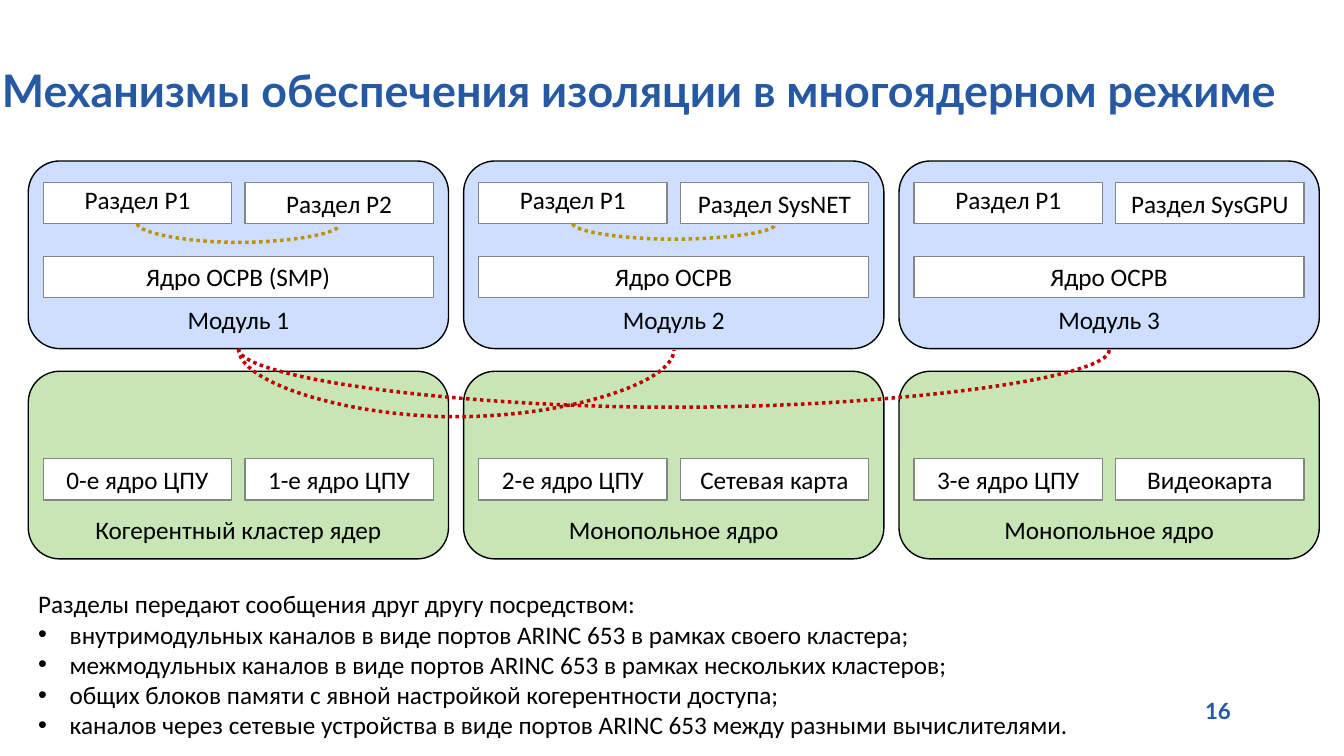
"""Build a slide on isolation mechanisms in multi-core mode."""
import pptx
import pptx.dml.color
import pptx.enum.dml
import pptx.enum.shapes
import pptx.enum.text
import pptx.oxml.ns
import pptx.util
from lxml import etree

Pt = pptx.util.Pt
RGBColor = pptx.dml.color.RGBColor
ALIGN = pptx.enum.text.PP_ALIGN
ANCHOR = pptx.enum.text.MSO_ANCHOR
SHAPE = pptx.enum.shapes.MSO_SHAPE
qn = pptx.oxml.ns.qn

TITLE = "Механизмы обеспечения изоляции в многоядерном режиме"
SLIDE_NUMBER = "16"
COLUMNS = [
    {"module": "Модуль 1", "partitions": ("Раздел P1", "Раздел P2"),
     "kernel": "Ядро ОСРВ (SMP)", "hardware": ("0-е ядро ЦПУ", "1-е ядро ЦПУ"),
     "cluster": "Когерентный кластер ядер"},
    {"module": "Модуль 2", "partitions": ("Раздел P1", "Раздел SysNET"),
     "kernel": "Ядро ОСРВ", "hardware": ("2-е ядро ЦПУ", "Сетевая карта"),
     "cluster": "Монопольное ядро"},
    {"module": "Модуль 3", "partitions": ("Раздел P1", "Раздел SysGPU"),
     "kernel": "Ядро ОСРВ", "hardware": ("3-е ядро ЦПУ", "Видеокарта"),
     "cluster": "Монопольное ядро"},
]
INTRO = "Разделы передают сообщения друг другу посредством:"
CHANNEL_KINDS = [
    "внутримодульных каналов в виде портов ARINC 653 в рамках своего кластера;",
    "межмодульных каналов в виде портов ARINC 653 в рамках нескольких кластеров;",
    "общих блоков памяти с явной настройкой когерентности доступа;",
    "каналов через сетевые устройства в виде портов ARINC 653 между разными вычислителями.",
]
INNER_CHANNELS = [(0, 13.45), (1, 11.18)]
OUTER_CHANNELS = [(0, 1, 49.04), (0, 2, 42.25)]

BLACK = RGBColor(0x00, 0x00, 0x00)
WHITE = RGBColor(0xFF, 0xFF, 0xFF)
GRAY = RGBColor(0x84, 0x84, 0x84)
BLUE = RGBColor(0x26, 0x59, 0xA4)
MODULE_FILL = RGBColor(0xCD, 0xDE, 0xFF)
CLUSTER_FILL = RGBColor(0xC7, 0xE5, 0xB5)
RED = RGBColor(0xC0, 0x00, 0x00)
GOLD = RGBColor(0xBF, 0x90, 0x00)

COLUMN_LEFT, COLUMN_PITCH = 20.2, 311
BLOCK_WIDTH, BLOCK_HEIGHT = 300.2, 134
MODULE_TOP, CLUSTER_TOP = 115, 265.2
CELL_INSET, CELL_PITCH = 10.7, 144
CELL_WIDTH, CELL_HEIGHT = 134.6, 29.5
PARTITION_TOP, KERNEL_TOP, HARDWARE_TOP = 130.3, 183, 327.6
INSET = 3.6
FIRST_PARTITION_LIFT = 5.7


def add_run(paragraph, text, size=18, font="Calibri", color=BLACK, bold=False):
    run = paragraph.add_run()
    run.text = text
    run.font.size = Pt(size)
    run.font.name = font
    run.font.bold = bold
    run.font.color.rgb = color


def set_insets(frame, bottom=INSET):
    frame.margin_left = frame.margin_right = frame.margin_top = Pt(INSET)
    frame.margin_bottom = Pt(bottom)


def add_block(slide, kind, left, top, width, height, fill, line, text, anchor):
    shape = slide.shapes.add_shape(kind, Pt(left), Pt(top), Pt(width), Pt(height))
    shape.shadow.inherit = False
    shape.fill.solid()
    shape.fill.fore_color.rgb = fill
    shape.line.color.rgb = line
    shape.line.width = Pt(1)
    frame = shape.text_frame
    frame.word_wrap = True
    frame.vertical_anchor = anchor
    set_insets(frame)
    frame.paragraphs[0].alignment = ALIGN.CENTER
    add_run(frame.paragraphs[0], text)
    return shape


def add_cell(slide, left, top, width, text):
    return add_block(slide, SHAPE.RECTANGLE, left, top, width, CELL_HEIGHT,
                     WHITE, GRAY, text, ANCHOR.MIDDLE)


def add_column(slide, left, column):
    for top, fill, key in ((MODULE_TOP, MODULE_FILL, "module"),
                           (CLUSTER_TOP, CLUSTER_FILL, "cluster")):
        add_block(slide, SHAPE.ROUNDED_RECTANGLE, left, top, BLOCK_WIDTH, BLOCK_HEIGHT,
                  fill, BLACK, column[key], ANCHOR.BOTTOM)
    cell_left = left + CELL_INSET
    for top, key in ((PARTITION_TOP, "partitions"), (HARDWARE_TOP, "hardware")):
        for index, text in enumerate(column[key]):
            cell = add_cell(slide, cell_left + index * CELL_PITCH, top, CELL_WIDTH, text)
            if key == "partitions" and index == 0:
                set_insets(cell.text_frame, INSET + FIRST_PARTITION_LIFT)
    add_cell(slide, cell_left, KERNEL_TOP, CELL_PITCH + CELL_WIDTH, column["kernel"])


def add_channel(slide, start, end, top, depth, color):
    """Draw a hanging curve: a one-point-wide connector turned by 270 degrees."""
    center, half_span = (start + end) / 2, (end - start) / 2
    middle = top + 0.5
    connector = slide.shapes.add_connector(
        pptx.enum.shapes.MSO_CONNECTOR.CURVE,
        Pt(center + 0.5), Pt(middle - half_span), Pt(center - 0.5), Pt(middle + half_span))
    connector.line.color.rgb = color
    connector.line.width = Pt(2.5)
    connector.line.dash_style = pptx.enum.dml.MSO_LINE.ROUND_DOT
    properties = connector.element.spPr
    properties.find(qn("a:xfrm")).set("rot", str(270 * 60000))
    geometry = properties.find(qn("a:prstGeom"))
    adjustments = geometry.find(qn("a:avLst"))
    if adjustments is None:
        adjustments = etree.SubElement(geometry, qn("a:avLst"))
    etree.SubElement(adjustments, qn("a:gd"), name="adj1", fmla=f"val {round(depth * 100000)}")
    etree.SubElement(properties, qn("a:effectLst"))


def add_text_box(slide, left, top, width, height):
    frame = slide.shapes.add_textbox(Pt(left), Pt(top), Pt(width), Pt(height)).text_frame
    frame.word_wrap = True
    return frame


def add_title(slide):
    title = slide.shapes.title
    title.left, title.top, title.width, title.height = Pt(-2.2), Pt(14.4), Pt(1039.7), Pt(104.4)
    frame = title.text_frame
    frame.auto_size = pptx.enum.text.MSO_AUTO_SIZE.NONE
    frame.vertical_anchor = ANCHOR.MIDDLE
    set_insets(frame)
    paragraph = frame.paragraphs[0]
    paragraph.alignment = ALIGN.LEFT
    paragraph.line_spacing = 0.9
    add_run(paragraph, TITLE, 32, "Lato", BLUE, True)


def add_channel_list(slide):
    frame = add_text_box(slide, 20.2, 416.9, 880.6, 138.2)
    add_run(frame.paragraphs[0], INTRO)
    for text in CHANNEL_KINDS:
        paragraph = frame.add_paragraph()
        add_run(paragraph, text)
        properties = paragraph._p.get_or_add_pPr()
        properties.set("marL", str(Pt(22.5)))
        properties.set("indent", str(-Pt(22.5)))
        etree.SubElement(properties, qn("a:buFont"), typeface="Arial")
        etree.SubElement(properties, qn("a:buChar"), char="•")


def main():
    presentation = pptx.Presentation()
    presentation.slide_width, presentation.slide_height = Pt(960), Pt(540)
    slide = presentation.slides.add_slide(presentation.slide_layouts[5])
    add_title(slide)

    lefts = [COLUMN_LEFT + index * COLUMN_PITCH for index in range(len(COLUMNS))]
    for left, column in zip(lefts, COLUMNS):
        add_column(slide, left, column)
    for index, depth in INNER_CHANNELS:
        start = lefts[index] + CELL_INSET + CELL_WIDTH / 2
        add_channel(slide, start, start + CELL_PITCH, PARTITION_TOP + CELL_HEIGHT, depth, GOLD)
    for first, last, depth in OUTER_CHANNELS:
        start, end = (lefts[index] + BLOCK_WIDTH / 2 for index in (first, last))
        add_channel(slide, start, end, MODULE_TOP + BLOCK_HEIGHT, depth, RED)

    add_channel_list(slide)
    number = add_text_box(slide, 724.3, 493.9, 162, 26.6)
    number.vertical_anchor = ANCHOR.MIDDLE
    number.paragraphs[0].alignment = ALIGN.RIGHT
    add_run(number.paragraphs[0], SLIDE_NUMBER, 16, "Lato", BLUE, True)
    presentation.save("out.pptx")


if __name__ == "__main__":
    main()
